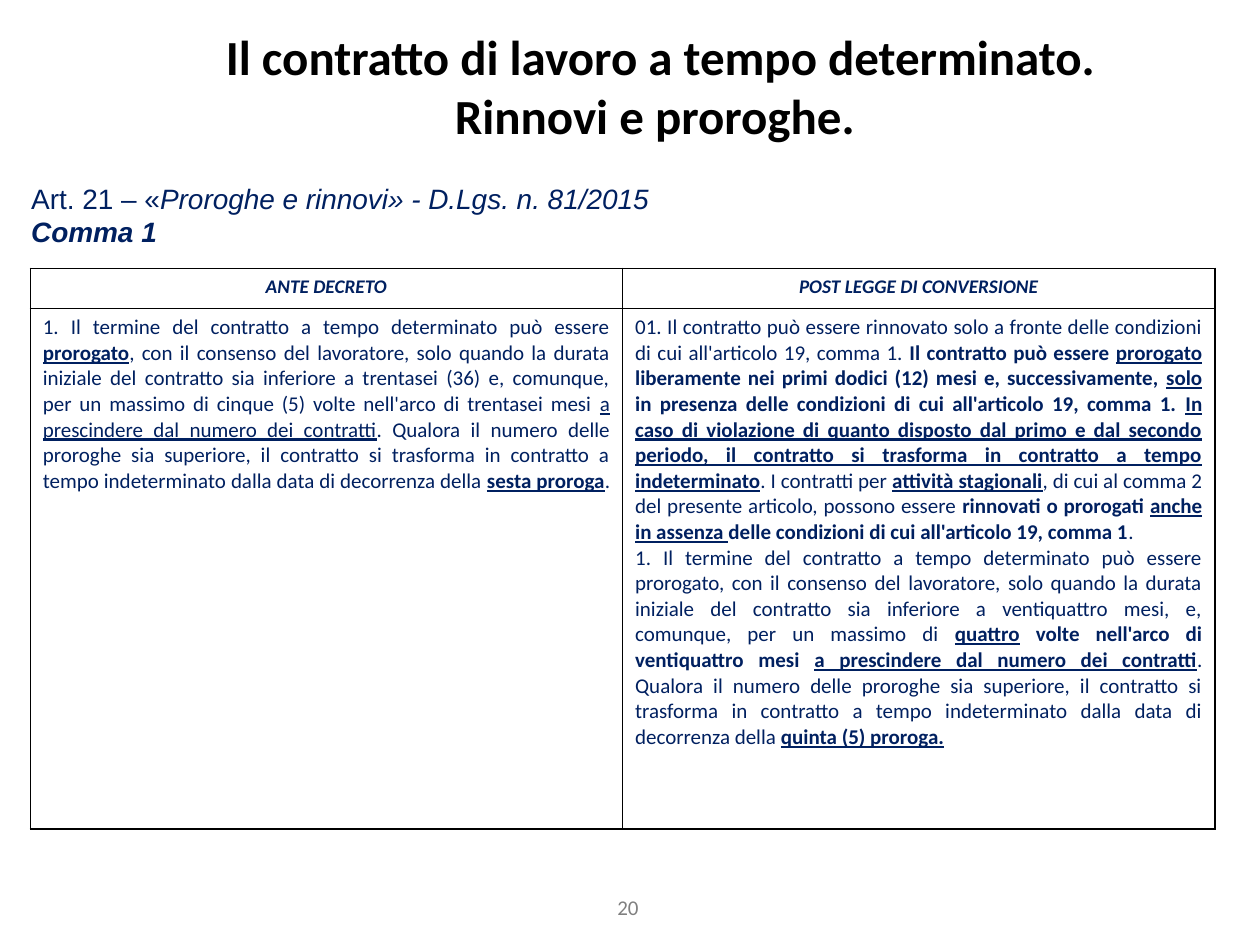
"""Build the slide on renewals and extensions of fixed-term contracts."""
import pptx
import pptx.dml.color
import pptx.enum.text
import pptx.oxml
import pptx.oxml.ns
import pptx.util

Cm = pptx.util.Cm
Pt = pptx.util.Pt
ALIGN = pptx.enum.text.PP_ALIGN
ANCHOR = pptx.enum.text.MSO_ANCHOR

HUES = {"ink": "000000", "navy": "002060", "gray": "808080"}
FLAGS = {"b": "bold", "i": "italic", "u": "underline"}

HEADS = ["ANTE DECRETO", "POST LEGGE DI CONVERSIONE"]
BEFORE = [[
    ("1. Il termine del contratto a tempo determinato può essere ", ""),
    ("prorogato", "bu"),
    (", con il consenso del lavoratore, solo quando la durata iniziale del contratto "
     "sia inferiore a trentasei (36) e, comunque, per un massimo di cinque (5) volte "
     "nell'arco di trentasei mesi ", ""),
    ("a prescindere dal numero dei contratti", "u"),
    (". Qualora il numero delle proroghe sia superiore, il contratto si trasforma in "
     "contratto a tempo indeterminato dalla data di decorrenza della ", ""),
    ("sesta proroga", "bu"),
    (". ", ""),
]]
AFTER = [[
    ("01. Il contratto può essere rinnovato solo a fronte delle condizioni di cui "
     "all'articolo 19, comma 1. ", ""),
    ("Il contratto può essere ", "b"),
    ("prorogato", "bu"),
    (" liberamente nei primi dodici (12) mesi e, successivamente, ", "b"),
    ("solo", "bu"),
    (" in presenza delle condizioni di cui all'articolo 19, comma 1. ", "b"),
    ("In caso di violazione di quanto disposto dal primo e dal secondo periodo, il "
     "contratto si trasforma in contratto a tempo indeterminato", "bu"),
    (". I contratti per ", ""),
    ("attività stagionali", "bu"),
    (", di cui al comma 2 del presente articolo, possono essere ", ""),
    ("rinnovati o prorogati ", "b"),
    ("anche in assenza ", "bu"),
    ("delle condizioni di cui all'articolo 19, comma 1", "b"),
    (". ", ""),
], [
    ("1. Il termine del contratto a tempo determinato può essere prorogato, con il "
     "consenso del lavoratore, solo quando la durata iniziale del contratto sia "
     "inferiore a ventiquattro mesi, e, comunque, per un massimo di ", ""),
    ("quattro", "bu"),
    (" volte nell'arco di ventiquattro mesi ", "b"),
    ("a prescindere dal numero dei contratti", "bu"),
    (". Qualora il numero delle proroghe sia superiore, il contratto si trasforma in "
     "contratto a tempo indeterminato dalla data di decorrenza della ", ""),
    ("quinta (5) proroga.", "bu"),
]]
ROWS = [
    (0.81, [[[(head, "bi")]] for head in HEADS], ("Calibri", 11, "navy", ALIGN.CENTER)),
    (10.49, [BEFORE, AFTER], ("Calibri", 12, "navy", ALIGN.JUSTIFY)),
]
TABLE = (0.61, 5.41, 23.88, 11.3)

BOXES = [
    ((9.7, 17.91, 5.92, 1.02), [[("20", "")]],
     ("Calibri", 12, "gray", ALIGN.CENTER), {}),
    ((3.71, 1.12, 19.2, 2.39),
     [[("Il contratto di lavoro a tempo determinato. Rinnovi e proroghe. ", "b")]],
     ("Calibri", 28, "ink", ALIGN.CENTER),
     {"vertical_anchor": ANCHOR.MIDDLE, "margin_bottom": Cm(1.32)}),
    ((0.38, 3.53, 20.55, 1.63),
     [[("Art. 21 – «", ""), ("Proroghe e rinnovi» - D.Lgs. n. 81/2015", "i")],
      [("Comma 1", "bi")]],
     ("Arial", 16, "navy", ALIGN.LEFT), {}),
]


def assign(item, vals):
    for name, val in vals.items():
        setattr(item, name, val)


def write(frame, paras, look):
    face, size, hue, align = look
    for n, runs in enumerate(paras):
        para = frame.add_paragraph() if n else frame.paragraphs[0]
        para.alignment = align
        for text, marks in runs:
            run = para.add_run()
            run.text = text
            assign(run.font, {"name": face, "size": Pt(size)})
            assign(run.font, {name: key in marks for key, name in FLAGS.items()})
            run.font.color.rgb = pptx.dml.color.RGBColor.from_string(HUES[hue])


def edge(cell):
    props = cell._tc.get_or_add_tcPr()
    for n, side in enumerate(("lnL", "lnR", "lnT", "lnB")):
        props.insert(n, pptx.oxml.parse_xml(
            f'<a:{side} {pptx.oxml.ns.nsdecls("a")} w="{Pt(1)}"><a:solidFill>'
            f'<a:srgbClr val="{HUES["ink"]}"/></a:solidFill></a:{side}>'))


def main():
    deck = pptx.Presentation()
    assign(deck, {"slide_width": Cm(25.4), "slide_height": Cm(19.05)})
    slide = deck.slides.add_slide(deck.slide_layouts[6])
    for place, paras, look, form in BOXES:
        frame = slide.shapes.add_textbox(*map(Cm, place)).text_frame
        assign(frame, {"word_wrap": True, **form})
        write(frame, paras, look)

    grid = slide.shapes.add_table(len(ROWS), len(HEADS), *map(Cm, TABLE)).table
    assign(grid, {"first_row": False, "horz_banding": False})
    for r, (tall, cells, look) in enumerate(ROWS):
        grid.rows[r].height = Cm(tall)
        for c, paras in enumerate(cells):
            cell = grid.cell(r, c)
            cell.fill.background()
            edge(cell)
            write(cell.text_frame, paras, look)
    deck.save("out.pptx")


if __name__ == "__main__":
    main()
